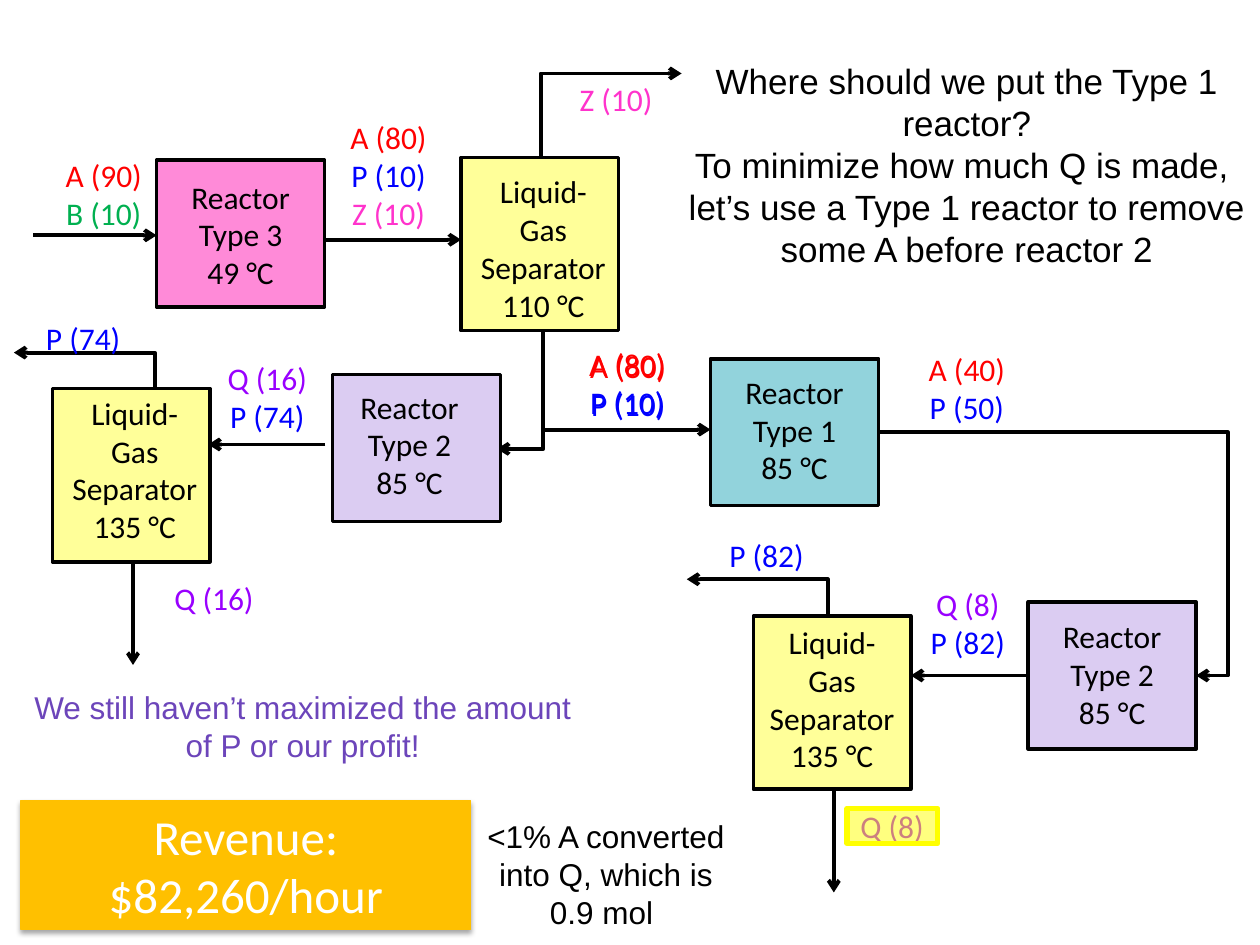
from lxml import etree
from pptx import Presentation
from pptx.dml.color import RGBColor
from pptx.enum.shapes import MSO_CONNECTOR, MSO_SHAPE
from pptx.enum.text import MSO_ANCHOR, MSO_AUTO_SIZE, PP_ALIGN
from pptx.oxml.ns import qn
from pptx.util import Pt

RECT = MSO_SHAPE.RECTANGLE
LINE, ELBOW = MSO_CONNECTOR.STRAIGHT, MSO_CONNECTOR.ELBOW
CENTER, MIDDLE = PP_ALIGN.CENTER, MSO_ANCHOR.MIDDLE
GROW = MSO_AUTO_SIZE.SHAPE_TO_FIT_TEXT

BLACK, WHITE, GOLD, GLOW = "000000", "FFFFFF", "FFC000", "FFFF00"
PINK, CREAM, TEAL, LILAC = "FF8AD8", "FFFF99", "92D3DC", "DBCCF2"
PURPLE = "6C45BA"
INKS = {"A": "FF0000", "B": "00B050", "P": "0000FF",
        "Q": "9900FF", "Z": "FF33CC"}

# left, top, shift of text right and down, fill, number, heat
REACTORS = [
    (89.5, 91.5, 0, 6.5, PINK, 3, 49),
    (406, 205, 0, 4.5, TEAL, 1, 85),
    (587.5, 344, 0, 5, LILAC, 2, 85),
    (190, 214, -4, 4, LILAC, 2, 85),
]
# left, top, shift of text right and down, heat
SPLITS = [
    (263.5, 90, 2, 5, 110),
    (430.5, 352, 0, 0.5, 135),
    (30, 222, 2, -0.5, 135),
]
# start and end of flows that run up or down, then sideways
BENDS = [
    (309, 90, 389.5, 42),
    (310.5, 190, 406, 245.5),
    (473, 379.5, 392.5, 331),
    (310.5, 189.5, 284, 256.5),
    (88.5, 250, 8, 201.5),
]
RUNS = [
    (19, 134.5, 89.5, 134.5),
    (186, 137, 263.5, 137),
    (587.5, 386, 520.5, 386),
    (186, 254, 119, 254),
    (476.5, 451, 476.5, 510),
    (76, 321, 76, 380),
]
# left, top, width, streams
STREAMS = [
    (24, 85.5, 70.5, ["A (90)", "B (10)"]),
    (150, 64, 144, ["A (80)", "P (10)", "Z (10)"]),
    (280, 42, 144, ["Z (10)"]),
    (287, 195, 144, ["A (80)", "P (10)"]),
    (286.5, 193.5, 144, ["A (80)", "P (10)"]),
    (507.5, 196.5, 90, ["A (40)", "P (50)"]),
    (481, 331, 144, ["Q (8)", "P (82)"]),
    (366, 302.5, 144, ["P (82)"]),
    (456.5, 457.5, 106.5, ["Q (8)"]),
    (80.5, 201.5, 144.5, ["Q (16)", "P (74)"]),
    (69, 327.5, 106.5, ["Q (16)"]),
    (-10, 178.5, 115, ["P (74)"]),
]


def tint(ink):
    return RGBColor.from_string(ink)


def write(frame, lines, size=18, font="Calibri", inks=(BLACK,)):
    """Fill a frame with centred lines; the last ink serves the rest."""
    frame.word_wrap = True
    for i, line in enumerate(lines):
        para = frame.add_paragraph() if i else frame.paragraphs[0]
        para.alignment = CENTER
        run = para.add_run()
        run.text = line
        run.font.size = Pt(size)
        run.font.name = font
        run.font.color.rgb = tint(inks[min(i, len(inks) - 1)])


def label(slide, x, y, w, lines, rows=None, **style):
    high = 7.2 + (rows or len(lines)) * style.get("size", 18) * 1.2
    box = slide.shapes.add_textbox(Pt(x), Pt(y), Pt(w), Pt(high))
    write(box.text_frame, lines, **style)
    box.text_frame.auto_size = GROW


def block(slide, x, y, w, h, fill, edge=BLACK, width=2):
    box = slide.shapes.add_shape(RECT, Pt(x), Pt(y), Pt(w), Pt(h))
    box.shadow.inherit = False
    box.fill.solid()
    box.fill.fore_color.rgb = tint(fill)
    box.line.color.rgb = tint(edge)
    box.line.width = Pt(width)
    return box


def arrow(slide, kind, x1, y1, x2, y2):
    line = slide.shapes.add_connector(kind, Pt(x1), Pt(y1), Pt(x2), Pt(y2))
    line.line.color.rgb = tint(BLACK)
    line.line.width = Pt(2.25)
    props = line._element.spPr
    etree.SubElement(props.find(qn("a:ln")), qn("a:tailEnd"), type="arrow")
    etree.SubElement(props, qn("a:effectLst"))
    return props


def bend(slide, x1, y1, x2, y2):
    """Turn a one-corner elbow by 90 degrees so it starts up or down."""
    cx, cy = (x1 + x2) / 2, (y1 + y2) / 2
    dx, dy = (x2 - x1) / 2, (y2 - y1) / 2
    props = arrow(slide, ELBOW, cx - dy, cy + dx, cx + dy, cy - dx)
    props.find(qn("a:xfrm")).set("rot", "5400000")
    props.find(qn("a:prstGeom")).set("prst", "bentConnector2")


def loop(slide, x1, y1, x2, y2, reach):
    """Draw an elbow whose middle leg lies at a share of its width."""
    props = arrow(slide, ELBOW, x1, y1, x2, y2)
    guides = props.find(qn("a:prstGeom")).find(qn("a:avLst"))
    etree.SubElement(guides, qn("a:gd"), name="adj1",
                     fmla=f"val {round(reach * 100000)}")


def banner(slide):
    box = block(slide, 12, 457.5, 257, 73.5, GOLD, GOLD, 0.75)
    box.text_frame.vertical_anchor = MIDDLE
    write(box.text_frame, ["Revenue: $82,260/hour"], size=28, inks=[WHITE])
    cast = etree.SubElement(
        box._element.spPr.find(qn("a:effectLst")), qn("a:outerShdw"),
        blurRad=str(Pt(3.1)), dist=str(Pt(1.8)), dir="5400000", rotWithShape="0")
    shade = etree.SubElement(cast, qn("a:srgbClr"), val=BLACK)
    etree.SubElement(shade, qn("a:alpha"), val="35000")


def marker(slide):
    box = block(slide, 484, 462, 52, 20, GLOW, GLOW, 3)
    fill = box._element.spPr.find(qn("a:solidFill"))
    etree.SubElement(fill[0], qn("a:alpha"), val="50000")


def main():
    deck = Presentation()
    deck.slide_width, deck.slide_height = Pt(720), Pt(540)
    slide = deck.slides.add_slide(deck.slide_layouts[6])

    for ends in BENDS:
        bend(slide, *ends)
    loop(slide, 502, 247, 683.5, 386, 1.1)
    for x, y, dx, dy, fill, kind, heat in REACTORS:
        block(slide, x, y, 96, 84, fill)
        label(slide, x + dx, y + dy, 96,
              ["Reactor", f"Type {kind}", f"{heat} °C"])
    for x, y, dx, dy, heat in SPLITS:
        block(slide, x, y, 90, 99, CREAM)
        label(slide, x + dx, y + dy, 90,
              ["Liquid-Gas Separator", f"{heat} °C"], rows=4)
    for ends in RUNS:
        arrow(slide, LINE, *ends)
    for x, y, w, lines in STREAMS:
        label(slide, x, y, w, lines, inks=[INKS[line[0]] for line in lines])

    label(slide, 386.5, 30.5, 332,
          ["Where should we put the Type 1 reactor?",
           "To minimize how much Q is made, ",
           "let’s use a Type 1 reactor to remove some A before reactor 2"],
          rows=5, size=20, font="Arial")
    banner(slide)
    marker(slide)
    label(slide, 12, 389.5, 322,
          ["We still haven’t maximized the amount of P or our profit!"],
          rows=2, font="Arial", inks=[PURPLE])
    label(slide, 265.5, 463.5, 161.5,
          ["<1% A converted into Q, which is 0.9 mol\u00a0"], rows=3, font="Arial")
    deck.save("out.pptx")


if __name__ == "__main__":
    main()
